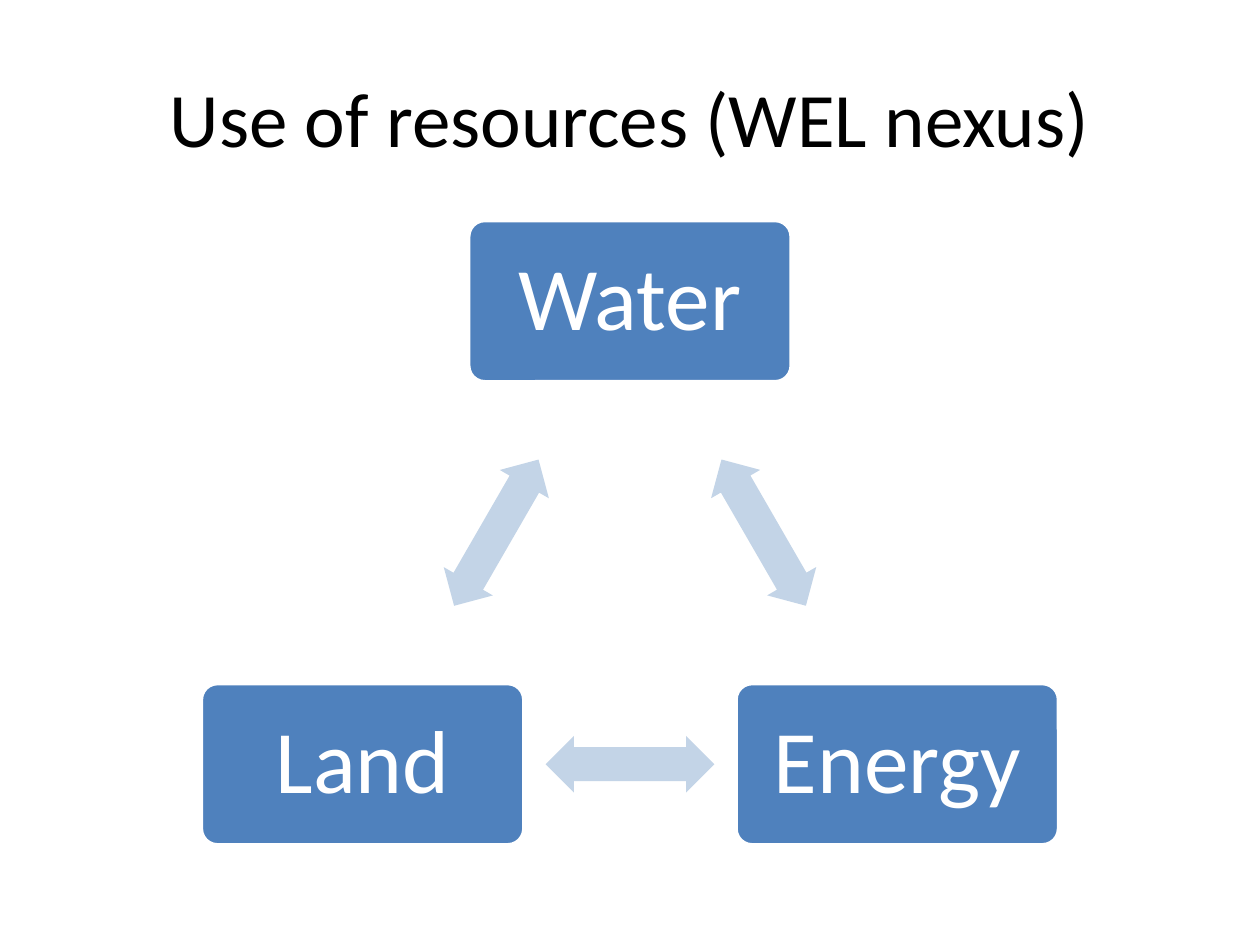
import math

from pptx import Presentation
from pptx.dml.color import RGBColor
from pptx.enum.shapes import MSO_SHAPE
from pptx.enum.text import MSO_ANCHOR, PP_ALIGN
from pptx.util import Inches, Pt

ROUNDED_BOX = MSO_SHAPE.ROUNDED_RECTANGLE
DOUBLE_ARROW = MSO_SHAPE.LEFT_RIGHT_ARROW
MIDDLE = MSO_ANCHOR.MIDDLE
CENTER = PP_ALIGN.CENTER

BLACK = RGBColor(0x00, 0x00, 0x00)
WHITE = RGBColor(0xFF, 0xFF, 0xFF)
BLUE = RGBColor(0x4F, 0x81, 0xBD)
PALE_BLUE = RGBColor(0xC3, 0xD4, 0xE7)

RESOURCES = ["Water", "Energy", "Land"]
CYCLE_CENTER = (5, 4.84)
CYCLE_RADIUS = 2.45
BOX_SIZE = (2.56, 1.28)
ARROW_SIZE = (1.34, 0.45)


def write_text(shape, text, size, color, **spacing):
    frame = shape.text_frame
    frame.word_wrap = True
    frame.vertical_anchor = MIDDLE
    paragraph = frame.paragraphs[0]
    paragraph.text = text
    paragraph.alignment = CENTER
    for name, value in spacing.items():
        setattr(paragraph, name, value)
    font = paragraph.runs[0].font
    for name, value in {"name": "Calibri", "size": Pt(size)}.items():
        setattr(font, name, value)
    font.color.rgb = color


def add_title(slide, text):
    title = slide.shapes.add_textbox(Inches(0.5), Inches(0.3), Inches(9), Inches(1.25))
    write_text(title, text, 44, BLACK)


def add_centered_shape(slide, kind, center, size, fill, adjustments):
    (x, y), (width, height) = center, size
    shape = slide.shapes.add_shape(
        kind, Inches(x - width / 2), Inches(y - height / 2), Inches(width), Inches(height)
    )
    shape.shadow.inherit = False
    shape.fill.solid()
    shape.fill.fore_color.rgb = fill
    for index, value in enumerate(adjustments):
        shape.adjustments[index] = value
    return shape


def add_resource(slide, name, center):
    box = add_centered_shape(slide, ROUNDED_BOX, center, BOX_SIZE, BLUE, [0.1])
    box.line.color.rgb = WHITE
    box.line.width = Pt(2)
    for side in ("left", "top", "right", "bottom"):
        setattr(box.text_frame, f"margin_{side}", Inches(0.21))
    write_text(box, name, 51, WHITE, line_spacing=0.9, space_after=Pt(17.9))


def add_link(slide, start, end):
    """Place a double arrow halfway between two points, turned along their line."""
    middle = [(a + b) / 2 for a, b in zip(start, end)]
    arrow = add_centered_shape(slide, DOUBLE_ARROW, middle, ARROW_SIZE, PALE_BLUE, [0.6, 0.5])
    arrow.line.fill.background()
    arrow.rotation = round(math.degrees(math.atan2(end[1] - start[1], end[0] - start[0]))) % 360


def cycle_points(count):
    """Return points evenly spaced clockwise round the cycle, from the top."""
    x, y = CYCLE_CENTER
    angles = [2 * math.pi * index / count for index in range(count)]
    return [
        (x + CYCLE_RADIUS * math.sin(angle), y - CYCLE_RADIUS * math.cos(angle))
        for angle in angles
    ]


def main():
    presentation = Presentation()
    presentation.slide_width = Inches(10)
    presentation.slide_height = Inches(7.5)
    slide = presentation.slides.add_slide(presentation.slide_layouts[6])

    add_title(slide, "Use of resources (WEL nexus)")
    points = cycle_points(len(RESOURCES))
    for name, start, end in zip(RESOURCES, points, points[1:] + points[:1]):
        add_resource(slide, name, start)
        add_link(slide, start, end)

    presentation.save("out.pptx")


if __name__ == "__main__":
    main()
